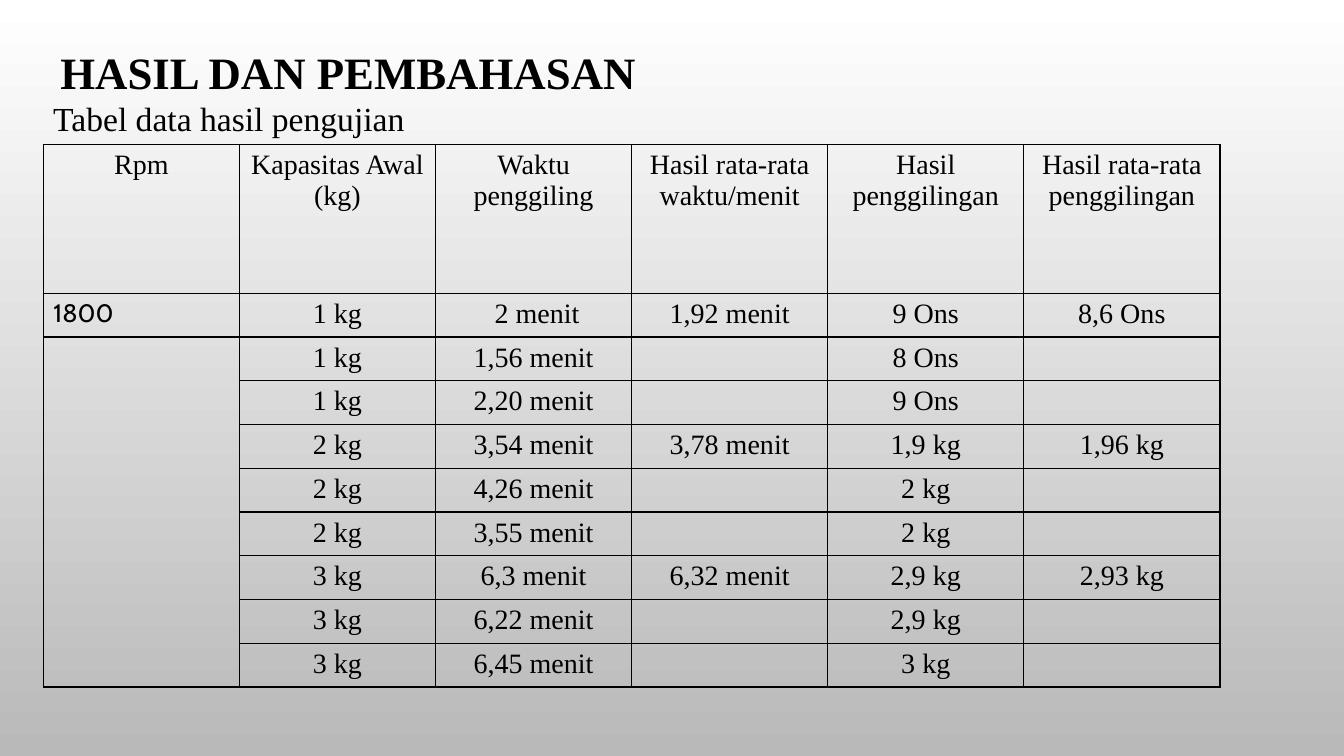
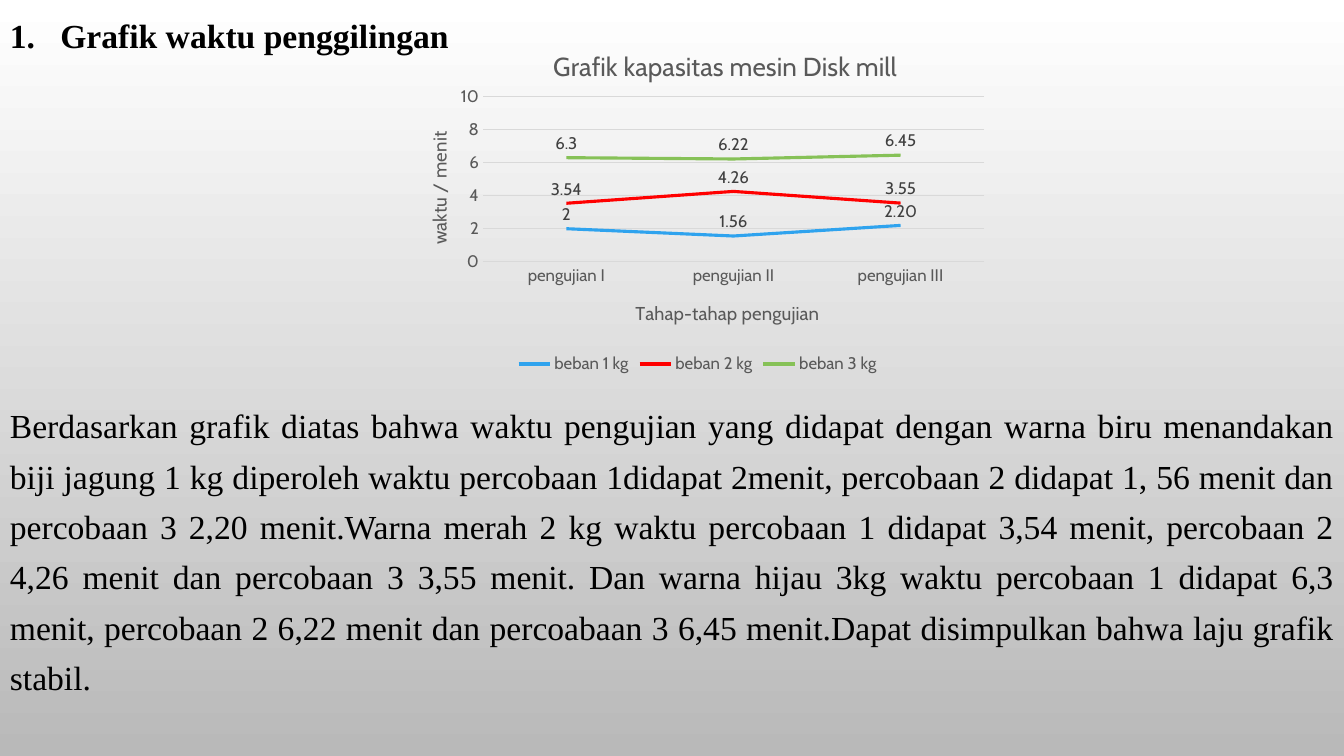
from dataclasses import dataclass

import lxml.etree
import pptx
import pptx.chart.data
import pptx.dml.color
import pptx.enum.chart
import pptx.enum.text
import pptx.oxml.ns
import pptx.util

Inches = pptx.util.Inches
Pt = pptx.util.Pt
RGB = pptx.dml.color.RGBColor
qn = pptx.oxml.ns.qn
ALIGN = pptx.enum.text.PP_ALIGN


@dataclass(frozen=True)
class Theme:
    serif: str = "Times New Roman"
    sans: str = "Cabin"
    ink: str = "000000"
    backdrop: tuple = ("FFFFFF", "B9B9B9")
    axis_ink: str = "595959"
    label_ink: str = "404040"
    grid: str = "D9D9D9"
    loads: tuple = ("2FA3EE", "FF0000", "86C157")
    heading: float = 32
    body: float = 24
    cell: float = 20
    rpm: float = 18
    chart_title: float = 18.6
    axis_title: float = 13.3
    chart_text: float = 12


THEME = Theme()

HEADERS = ["Rpm", "Kapasitas Awal (kg)", "Waktu penggiling", "Hasil rata-rata waktu/menit",
           "Hasil penggilingan", "Hasil rata-rata penggilingan"]
TRIALS = [
    ["1800", "1 kg", " 2 menit", "1,92 menit", "9 Ons", "8,6 Ons"],
    ["", "1 kg", "1,56 menit", "", "8 Ons", ""],
    ["", "1 kg", "2,20 menit", "", "9 Ons", ""],
    ["", "2 kg", "3,54 menit", "3,78 menit", "1,9 kg", "1,96 kg"],
    ["", "2 kg", "4,26 menit", "", "2 kg", ""],
    ["", "2 kg", "3,55 menit", "", "2 kg", ""],
    ["", "3 kg", "6,3 menit", "6,32 menit", "2,9 kg", "2,93 kg"],
    ["", "3 kg", "6,22 menit", "", "2,9 kg", ""],
    ["", "3 kg", "6,45 menit", "", "3 kg", ""],
]
STAGES = ["pengujian I", "pengujian II", "pengujian III"]
GRINDING_TIMES = {
    "beban 1 kg": [2, 1.56, 2.2],
    "beban 2 kg": [3.54, 4.26, 3.55],
    "beban 3 kg": [6.3, 6.22, 6.45],
}
DISCUSSION = (
    "Berdasarkan grafik diatas bahwa waktu pengujian yang didapat dengan warna biru menandakan "
    "biji jagung 1 kg diperoleh waktu percobaan 1didapat 2menit, percobaan 2 didapat 1, 56 menit "
    "dan percobaan 3 2,20 menit.Warna merah 2 kg waktu percobaan 1 didapat 3,54 menit, percobaan 2 "
    "4,26 menit dan percobaan 3 3,55 menit. Dan warna hijau 3kg waktu percobaan 1 didapat 6,3 "
    "menit, percobaan 2 6,22 menit dan percoabaan 3 6,45 menit.Dapat disimpulkan bahwa laju grafik "
    "stabil."
)


def rgb(value):
    return RGB.from_string(value)


def style(font, size, color=THEME.ink, face=THEME.serif, bold=False):
    font.size = Pt(size)
    font.name = face
    font.bold = bold
    font.color.rgb = rgb(color)


def style_runs(paragraph, size, **look):
    for run in paragraph.runs:
        style(run.font, size, **look)


def paint_backdrop(master):
    fill = master.background.fill
    fill.gradient()
    fill.gradient_angle = 270
    for stop, color in zip(fill.gradient_stops, THEME.backdrop):
        stop.color.rgb = rgb(color)


def add_text(slide, left, top, width, height, lines):
    frame = slide.shapes.add_textbox(
        Inches(left), Inches(top), Inches(width), Inches(height)).text_frame
    frame.word_wrap = True
    frame.text = "\n".join(lines)
    return frame.paragraphs


def indent(paragraph, margin, first=0):
    properties = paragraph._p.get_or_add_pPr()
    properties.set("marL", str(Inches(margin)))
    properties.set("indent", str(Inches(first)))
    return properties


def number(paragraph):
    properties = indent(paragraph, 0.5, -0.5)
    lxml.etree.SubElement(properties, qn("a:buFont"), typeface="+mj-lt")
    lxml.etree.SubElement(properties, qn("a:buAutoNum"), type="arabicPeriod")


def border(cell):
    properties = cell._tc.get_or_add_tcPr()
    for position, side in enumerate(("a:lnL", "a:lnR", "a:lnT", "a:lnB")):
        line = lxml.etree.Element(qn(side), w=str(Pt(1)))
        fill = lxml.etree.SubElement(line, qn("a:solidFill"))
        lxml.etree.SubElement(fill, qn("a:srgbClr"), val=THEME.ink)
        properties.insert(position, line)


def add_results_table(slide, left, top, column_width, header_height, row_height):
    rows = [HEADERS] + TRIALS
    table = slide.shapes.add_table(
        len(rows), len(HEADERS), Inches(left), Inches(top),
        Inches(column_width * len(HEADERS)),
        Inches(header_height + row_height * len(TRIALS))).table
    table.first_row = table.horz_banding = False
    for column in table.columns:
        column.width = Inches(column_width)
    for r, texts in enumerate(rows):
        table.rows[r].height = Inches(row_height if r else header_height)
        for c, text in enumerate(texts):
            cell = table.cell(r, c)
            cell.fill.background()
            border(cell)
            cell.text_frame.text = text
            paragraph = cell.text_frame.paragraphs[0]
            if r and c == 0:
                style_runs(paragraph, THEME.rpm, face=THEME.sans)
            else:
                paragraph.alignment = ALIGN.CENTER
                style_runs(paragraph, THEME.cell)
    table.cell(2, 0).merge(table.cell(len(TRIALS), 0))


def place(element, index, **fractions):
    for old in element.findall(qn("c:layout")):
        element.remove(old)
    layout = lxml.etree.Element(qn("c:layout"))
    manual = lxml.etree.SubElement(layout, qn("c:manualLayout"))
    if "w" in fractions:
        lxml.etree.SubElement(manual, qn("c:layoutTarget"), val="inner")
    for mode in ("c:xMode", "c:yMode"):
        lxml.etree.SubElement(manual, qn(mode), val="edge")
    for key, value in fractions.items():
        lxml.etree.SubElement(manual, qn("c:" + key), val=str(value))
    element.insert(index, layout)


def write_title(title, text, size, x, y):
    title.text_frame.text = text
    style_runs(title.text_frame.paragraphs[0], size, color=THEME.axis_ink, face=THEME.sans)
    place(title._element, 1, x=x, y=y)


def style_axis(axis, title, x, y):
    axis.major_tick_mark = axis.minor_tick_mark = pptx.enum.chart.XL_TICK_MARK.NONE
    style(axis.tick_labels.font, THEME.chart_text, THEME.axis_ink, THEME.sans)
    write_title(axis.axis_title, title, THEME.axis_title, x, y)


def rule(line, color, width):
    line.color.rgb = rgb(color)
    line.width = Pt(width)


def style_load(series, color):
    series.smooth = False
    rule(series.format.line, color, 2.25)
    labels = series.data_labels
    labels.show_value = True
    labels.position = pptx.enum.chart.XL_LABEL_POSITION.ABOVE
    style(labels.font, THEME.chart_text, THEME.label_ink, THEME.sans)


def relabel(point, text):
    label = point.data_label
    label.text_frame.text = text
    label.position = pptx.enum.chart.XL_LABEL_POSITION.ABOVE
    style_runs(label.text_frame.paragraphs[0], THEME.chart_text,
               color=THEME.label_ink, face=THEME.sans)


def add_time_chart(slide, left, top, width, height):
    times = pptx.chart.data.CategoryChartData()
    times.categories = STAGES
    for load, minutes in GRINDING_TIMES.items():
        times.add_series(load, minutes)
    chart = slide.shapes.add_chart(
        pptx.enum.chart.XL_CHART_TYPE.LINE, Inches(left), Inches(top),
        Inches(width), Inches(height), times).chart
    style(chart.font, THEME.chart_text, THEME.axis_ink, THEME.sans)
    write_title(chart.chart_title, "Grafik kapasitas mesin Disk mill",
                THEME.chart_title, 0.25, 0.05)

    stages, minutes = chart.category_axis, chart.value_axis
    style_axis(stages, "Tahap-tahap pengujian", 0.39, 0.77)
    rule(stages.format.line, THEME.grid, 0.75)
    style_axis(minutes, "waktu / menit", 0.04, 0.29)
    minutes.axis_title.text_frame._txBody.bodyPr.set("rot", "-5400000")
    minutes.minimum_scale, minutes.maximum_scale, minutes.major_unit = 0, 10, 2
    minutes.format.line.fill.background()
    rule(minutes.major_gridlines.format.line, THEME.grid, 0.75)

    plot = chart.plots[0]
    plot.vary_by_categories = False
    for series, color in zip(plot.series, THEME.loads):
        style_load(series, color)
    relabel(plot.series[0].points[2], "2.20")
    place(chart._chartSpace.find(".//" + qn("c:plotArea")), 0, x=0.14, y=0.2, w=0.84, h=0.47)

    chart.has_legend = True
    chart.legend.position = pptx.enum.chart.XL_LEGEND_POSITION.BOTTOM
    chart.legend.include_in_layout = False
    style(chart.legend.font, THEME.chart_text, THEME.axis_ink, THEME.sans)


def build_results(slide):
    heading, caption = add_text(slide, 0.43, -0.14, 6.67, 1.58,
                                ["HASIL DAN PEMBAHASAN", "Tabel data hasil pengujian"])
    indent(heading, 0.07)
    heading.line_spacing = 2.0
    style_runs(heading, THEME.heading, bold=True)
    style_runs(caption, THEME.body)
    add_results_table(slide, 0.43, 1.43, 1.945, 1.48, 0.42)


def build_time_graph(slide):
    heading, = add_text(slide, 0, 0, 6, 0.55, ["Grafik waktu penggilingan"])
    number(heading)
    discussion, = add_text(slide, 0, 3.87, 13.33, 3.1, [DISCUSSION])
    discussion.alignment = ALIGN.JUSTIFY
    for paragraph, bold in ((heading, True), (discussion, False)):
        paragraph.line_spacing = 1.25
        style(paragraph.font, THEME.body, bold=bold)
        style_runs(paragraph, THEME.body, bold=bold)
    add_time_chart(slide, 3.96, 0.26, 5.92, 3.49)


def main():
    deck = pptx.Presentation()
    deck.slide_width, deck.slide_height = Inches(13.33), Inches(7.5)
    paint_backdrop(deck.slide_master)
    for build in (build_results, build_time_graph):
        build(deck.slides.add_slide(deck.slide_layouts[6]))
    deck.save("out.pptx")


if __name__ == "__main__":
    main()
